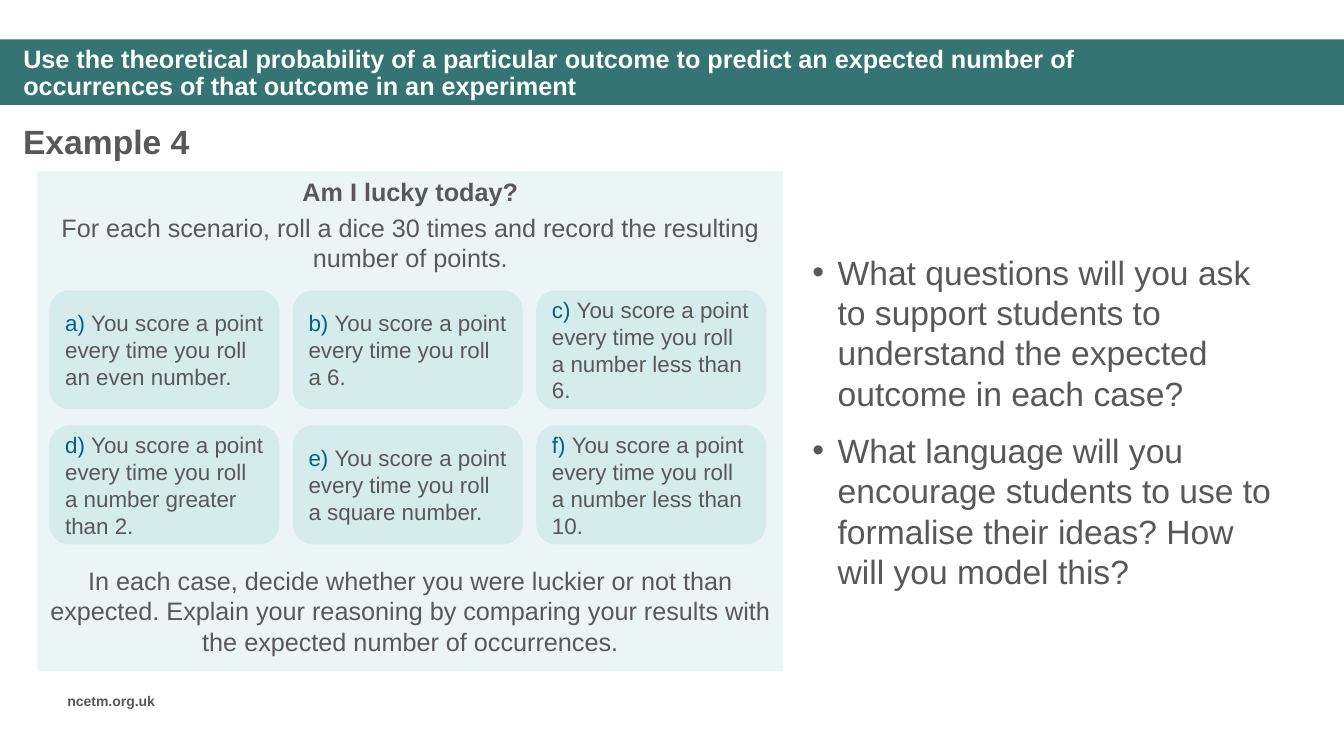
from lxml import etree
from pptx import Presentation
from pptx import util as u
from pptx.dml.color import RGBColor
from pptx.enum import shapes, text
from pptx.oxml.ns import qn

TEAL = RGBColor(0x34, 0x75, 0x74)
PALE = RGBColor(0xEB, 0xF5, 0xF5)
MINT = RGBColor(0xD6, 0xEB, 0xEB)
GREY = RGBColor(0x58, 0x58, 0x58)
BLUE = RGBColor(0x00, 0x62, 0x8C)
WHITE = RGBColor(0xFF, 0xFF, 0xFF)

WIDE, HIGH = u.Inches(13.33), u.Inches(7.5)
COL, ROW = WIDE / 100, HIGH / 100  # the slide is a grid of 100 by 100

TITLE = ("Use the theoretical probability of a particular outcome to predict "
         "an expected number of occurrences of that outcome in an experiment")
INTRO = ["Am I lucky today?",
         "For each scenario, roll a dice 30 times and record the resulting "
         "number of points."]
CLOSE = ("In each case, decide whether you were luckier or not than expected. "
         "Explain your reasoning by comparing your results with the expected "
         "number of occurrences.")
SCORE = "You score a point every time you roll "
ROLLS = ["an even number.", "a 6.", "a number less than 6.",
         "a number greater than 2.", "a square number.",
         "a number less than 10."]
ASKS = ["What questions will you ask to support students to understand the "
        "expected outcome in each case?",
        "What language will you encourage students to use to formalise their "
        "ideas? How will you model this?"]


def emus(box):
    """Turn (column, row, columns, rows) into slide lengths."""
    x, y, w, h = box
    return [u.Emu(round(n)) for n in (x * COL, y * ROW, w * COL, h * ROW)]


def style(run, size, color=GREY, bold=False):
    font = run.font
    font.name, font.size, font.bold = "Arial", u.Pt(size), bold
    font.color.rgb = color


def block(parent, box, fill, kind=shapes.MSO_SHAPE.RECTANGLE):
    shape = parent.add_shape(kind, *emus(box))
    shape.shadow.inherit = False
    shape.fill.solid()
    shape.fill.fore_color.rgb = fill
    shape.line.fill.background()
    return shape


def words(parent, box, lines, size, bold=False, align=text.PP_ALIGN.LEFT):
    frame = parent.add_textbox(*emus(box)).text_frame
    frame.word_wrap = True
    frame.text = "\n".join(lines)
    for par in frame.paragraphs:
        par.alignment = align
        style(par.runs[0], size, bold=bold)
    return frame


def header(slide, box):
    x, y, w, h = box
    block(slide.shapes, box, TEAL)
    title = slide.shapes.title
    slide.shapes.element.append(title.element)  # in front of the band
    title.left, title.top, title.width, title.height = emus(
        (x + 0.98, y + 1.47, w - 10.2, h - 2.4))
    frame = title.text_frame
    frame.text = TITLE
    frame.word_wrap = True
    frame.auto_size = text.MSO_AUTO_SIZE.NONE
    frame.vertical_anchor = text.MSO_ANCHOR.MIDDLE
    par = frame.paragraphs[0]
    par.alignment = text.PP_ALIGN.LEFT
    par.line_spacing = 0.9
    style(par.runs[0], 18, WHITE, True)


def card(parent, box, label, task):
    shape = block(parent, box, MINT, shapes.MSO_SHAPE.ROUNDED_RECTANGLE)
    frame = shape.text_frame
    frame.word_wrap = True
    frame.vertical_anchor = text.MSO_ANCHOR.MIDDLE
    par = frame.paragraphs[0]
    par.alignment = text.PP_ALIGN.LEFT
    for part, color in ((label, BLUE), (task, GREY)):
        run = par.add_run()
        run.text = part
        style(run, 16, color)


def panel(slide, box):
    x, y, w, h = box
    group = slide.shapes.add_group_shape().shapes
    block(group, box, PALE)
    mid = text.PP_ALIGN.CENTER
    head, lead = words(group, (x, y, w, 14.27), INTRO, 18,
                       align=mid).paragraphs
    head.runs[0].font.bold = True
    lead.space_before = u.Pt(4)
    words(group, (x, y + 51.47, w, 13.47), [CLOSE], 18, align=mid)
    for i, roll in enumerate(ROLLS):
        row, col = divmod(i, 3)
        spot = (x + 0.9 + col * 18.11, y + 15.73 + row * 17.87, 17.1, 15.73)
        card(group, spot, "abcdef"[i] + ") ", SCORE + roll)


def prompts(slide, box):
    frame = words(slide.shapes, box, ASKS, 24)
    frame.vertical_anchor = text.MSO_ANCHOR.MIDDLE
    for par in frame.paragraphs:
        par.level = 1
        par.space_after = u.Pt(12)
        props = par._p.get_or_add_pPr()
        props.set("marL", str(u.Inches(0.75)))
        props.set("indent", str(u.Inches(-0.25)))
        etree.SubElement(props, qn("a:buFont")).set("typeface", "Arial")
        etree.SubElement(props, qn("a:buChar")).set("char", "•")


def main():
    deck = Presentation()
    deck.slide_width, deck.slide_height = WIDE, HIGH
    slide = deck.slides.add_slide(deck.slide_layouts[5])
    header(slide, (0, 5.2, 100, 8.67))
    words(slide.shapes, (4.28, 90.93, 9.08, 3.6), ["ncetm.org.uk"], 10, True)
    words(slide.shapes, (0.98, 15.33, 50, 6.67), ["Example 4"], 24, True)
    prompts(slide, (55.96, 22.67, 40.13, 66.13))
    panel(slide, (2.78, 22.67, 55.5, 66.13))
    deck.save("out.pptx")


if __name__ == "__main__":
    main()
